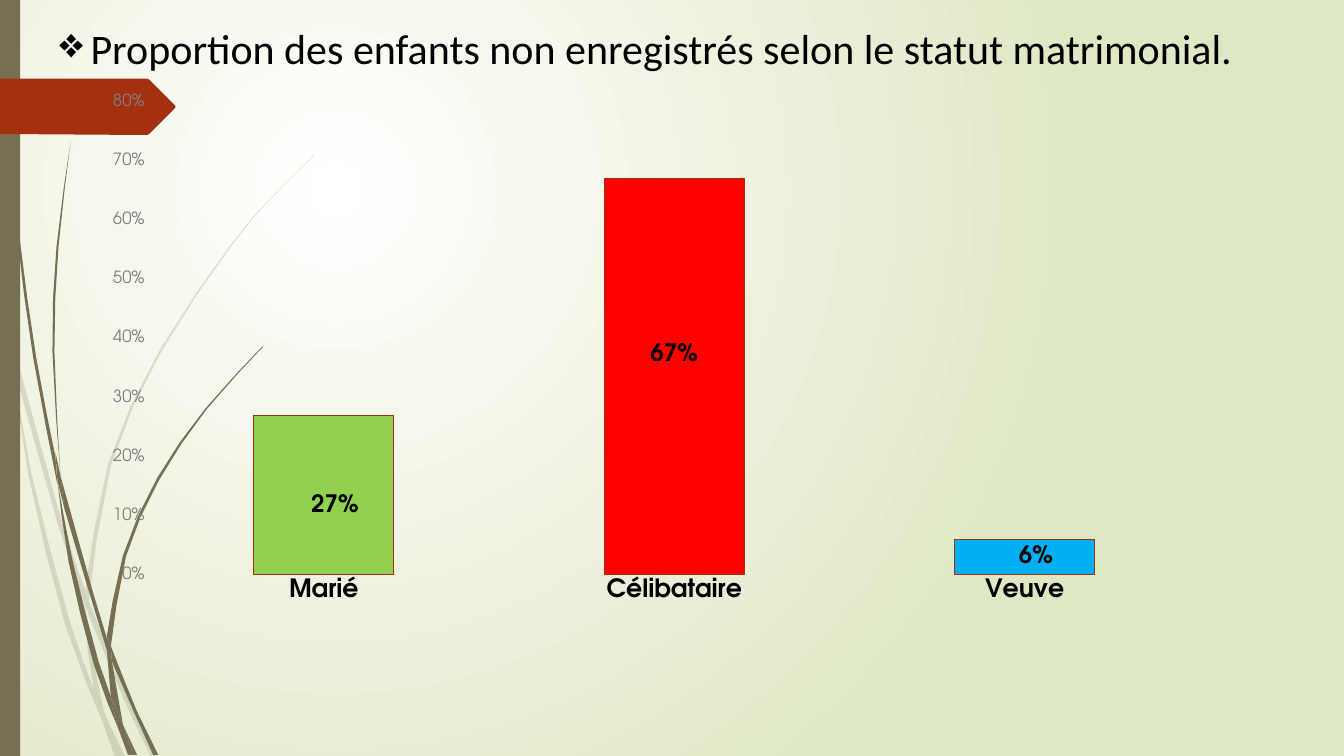
from math import dist

from lxml.etree import SubElement
from pptx import Presentation
from pptx.chart.data import CategoryChartData
from pptx.dml.color import RGBColor
from pptx.enum.chart import XL_CHART_TYPE, XL_LABEL_POSITION, XL_TICK_MARK
from pptx.enum.shapes import MSO_SHAPE
from pptx.enum.text import MSO_AUTO_SIZE
from pptx.oxml import parse_xml
from pptx.oxml.ns import nsdecls, qn
from pptx.util import Pt

PX = 9144  # one hundredth of an inch
WIDTH, HEIGHT = 1333, 750
LONG_SPAN = 60

BLACK = RGBColor(0x00, 0x00, 0x00)
GRAY = RGBColor(0x80, 0x80, 0x80)
WHITE = RGBColor(0xFF, 0xFF, 0xFF)
PALE_GREEN = RGBColor(0xDF, 0xE8, 0xC4)
OLIVE = RGBColor(0x76, 0x6F, 0x54)
RUST = RGBColor(0xA5, 0x30, 0x10)
BAR_EDGE = RGBColor(0xA1, 0x2F, 0x10)
GREEN = RGBColor(0x92, 0xD0, 0x50)
RED = RGBColor(0xFF, 0x00, 0x00)
BLUE = RGBColor(0x00, 0xB0, 0xF0)

CHART_FONT = "TeX Gyre Adventor"
TITLE_FONT = "Calibri"
TITLE = "Proportion des enfants non enregistrés selon le statut matrimonial."

# category, share, bar colour, label shift as fractions of the chart
BARS = [
    ("Marié", 0.27, GREEN, (0.01, 0.02)),
    ("Célibataire", 0.67, RED, (0, -0.04)),
    ("Veuve", 0.06, BLUE, (0.01, 0)),
]

# Each blade of grass is a pair of edges: one way along it, then back.
PALE_BLADES = [
    ([(11, 350), (0, 282)], [(0, 299), (11, 350)]),
    ([(17, 376), (58, 522), (84, 599)], [(85, 586), (62, 520), (14, 345)]),
    ([(88, 610), (123, 694), (150, 751)], [(155, 751), (127, 692), (88, 596)]),
    ([(105, 711), (119, 751)], [(124, 751), (105, 711)]),
    ([(101, 714), (93, 683), (70, 619), (31, 469), (11, 350)],
     [(11, 350), (28, 470), (65, 621), (101, 714)]),
    ([(84, 599), (87, 646), (93, 683), (105, 711)], [(103, 706), (91, 646), (84, 599)]),
    ([(312, 153), (268, 197), (228, 244), (158, 348), (107, 461), (85, 584)],
     [(88, 596), (110, 462), (160, 349), (229, 245), (268, 198), (312, 154)]),
    ([(101, 714), (114, 751)], [(119, 751), (101, 714)]),
    ([(85, 586), (84, 599)], [(88, 610), (88, 596)]),
    ([(93, 683), (101, 714), (119, 751)], [(119, 751), (105, 711), (93, 683)]),
]
DARK_BLADES = [
    ([(3, 0), (7, 110), (17, 233), (33, 355), (57, 481)],
     [(55, 453), (36, 355), (19, 232), (8, 109), (4, 0)]),
    ([(60, 472), (64, 505), (106, 645)], [(106, 633), (93, 590), (60, 472)]),
    ([(110, 641), (111, 656), (152, 749)], [(157, 749), (136, 706), (110, 641)]),
    ([(57, 477), (68, 557), (93, 659), (117, 722)],
     [(110, 691), (98, 657), (72, 556), (57, 477)]),
    ([(70, 141), (56, 245), (52, 349), (60, 472)],
     [(60, 472), (54, 349), (58, 245), (70, 141)]),
    ([(122, 719), (133, 749)], [(136, 749), (122, 719)]),
    ([(57, 477), (64, 505)], [(60, 472), (55, 449)]),
    ([(260, 344), (204, 405), (156, 474), (122, 551), (106, 631)],
     [(110, 641), (125, 552), (158, 476), (205, 406), (261, 344)]),
    ([(117, 722), (127, 749)], [(131, 749), (117, 722)]),
    ([(106, 645), (110, 691), (122, 719)], [(111, 656), (106, 645)]),
    ([(106, 645), (111, 656)], [(110, 641), (106, 631)]),
    ([(110, 691), (117, 722), (130, 749)], [(133, 749), (122, 719), (110, 691)]),
]
ARROW_TAB = [(0, 78), (146, 78), (148, 79), (174, 105), (174, 107), (148, 133), (146, 134), (0, 133)]


def paint_background(page):
    fill = page.background.fill
    fill.gradient()
    for stop, color, position in zip(fill.gradient_stops, (WHITE, PALE_GREEN), (0, 1)):
        stop.color.rgb = color
        stop.position = position
    gradient = page.background._cSld.find(".//" + qn("a:gradFill"))
    gradient.remove(gradient.find(qn("a:lin")))
    gradient.append(parse_xml(
        f'<a:path {nsdecls("a")} path="circle">'
        '<a:fillToRect l="50000" t="50000" r="100000" b="100000"/></a:path>'))


def smooth(edge):
    """Bend each long span of an edge by adding its Catmull-Rom midpoint."""
    knots = [edge[0], *edge, edge[-1]]
    curve = [edge[0]]
    for a, b, c, d in zip(knots, knots[1:], knots[2:], knots[3:]):
        if dist(b, c) > LONG_SPAN:
            curve.append(tuple((9 * (q + r) - p - s) / 16 for p, q, r, s in zip(a, b, c, d)))
        curve.append(c)
    return curve


def paint(shape, color, opacity=100):
    shape.shadow.inherit = False
    shape.fill.solid()
    shape.fill.fore_color.rgb = color
    shape.line.fill.background()
    if opacity < 100:
        tint = shape.fill._xPr.find(".//" + qn("a:srgbClr"))
        SubElement(tint, qn("a:alpha"), val=str(opacity * 1000))


def add_outline(page, points, color, opacity=100):
    start, *rest = [(round(x * PX), round(y * PX)) for x, y in points]
    builder = page.shapes.build_freeform(*start)
    builder.add_line_segments(rest, close=True)
    paint(builder.convert_to_shape(), color, opacity)


def add_blades(page, blades, opacity):
    for outward, back in blades:
        add_outline(page, smooth(outward) + smooth(back), OLIVE, opacity)


def set_font(font, size, color, bold=False, name=CHART_FONT):
    font.name = name
    font.size = Pt(size)
    font.bold = bold
    font.color.rgb = color


def manual_layout(x, y, width=None, height=None):
    """Layout of the inner plot when a size is given, else a label's shift."""
    tags = f'<c:x val="{x}"/><c:y val="{y}"/>'
    if width is not None:
        tags = ('<c:layoutTarget val="inner"/><c:xMode val="edge"/><c:yMode val="edge"/>'
                f'{tags}<c:w val="{width}"/><c:h val="{height}"/>')
    return parse_xml(f'<c:layout {nsdecls("c")}><c:manualLayout>{tags}</c:manualLayout></c:layout>')


def style_axis(axis, size, color, bold=False):
    axis.has_major_gridlines = False
    axis.major_tick_mark = axis.minor_tick_mark = XL_TICK_MARK.NONE
    axis.format.line.fill.background()
    set_font(axis.tick_labels.font, size, color, bold)


def style_bar(point, color, shift):
    point.format.fill.solid()
    point.format.fill.fore_color.rgb = color
    point.format.line.color.rgb = BAR_EDGE
    point.format.line.width = Pt(0.75)
    label = point.data_label
    set_font(label.font, 17.1, BLACK, bold=True)
    label.position = XL_LABEL_POSITION.CENTER
    label._get_or_add_dLbl().find(qn("c:idx")).addnext(manual_layout(*shift))


def add_status_chart(page):
    chart_data = CategoryChartData(number_format="0%")
    chart_data.categories = [bar[0] for bar in BARS]
    chart_data.add_series("Series 1", [bar[1] for bar in BARS])
    chart = page.shapes.add_chart(XL_CHART_TYPE.COLUMN_CLUSTERED, 112 * PX, 79 * PX,
                                  1123 * PX, 546 * PX, chart_data).chart
    chart.has_legend = chart.has_title = False
    set_font(chart.font, 10, BLACK)
    style_axis(chart.category_axis, 18, BLACK, bold=True)
    scale = chart.value_axis
    style_axis(scale, 12, GRAY)
    scale.minimum_scale, scale.maximum_scale, scale.major_unit = 0, 0.8, 0.1
    scale.tick_labels.number_format = "0%"
    scale.tick_labels.number_format_is_linked = False

    plot = chart.plots[0]
    plot.gap_width = 150
    plot.vary_by_categories = False
    for index, (_, _, color, shift) in enumerate(BARS):
        style_bar(plot.series[0].points[index], color, shift)
    area = chart._chartSpace.find(".//" + qn("c:plotArea"))
    for layout in area.findall(qn("c:layout")):
        area.remove(layout)
    area.insert(0, manual_layout(0.03, 0.04, 0.93, 0.86))


def add_title(page):
    box = page.shapes.add_textbox(49 * PX, 14 * PX, 1284 * PX, 64 * PX)
    box.text_frame.word_wrap = True
    box.text_frame.auto_size = MSO_AUTO_SIZE.SHAPE_TO_FIT_TEXT
    para = box.text_frame.paragraphs[0]
    para.line_spacing = 1.07
    para.space_after = Pt(8)
    properties = para._p.get_or_add_pPr()
    properties.set("marL", str(31 * PX))
    properties.set("indent", str(-31 * PX))
    SubElement(properties, qn("a:buChar"), char="❖")
    span = para.add_run()
    span.text = TITLE
    set_font(span.font, 30, BLACK, name=TITLE_FONT)


def main():
    deck = Presentation()
    deck.slide_width, deck.slide_height = WIDTH * PX, HEIGHT * PX
    page = deck.slides.add_slide(deck.slide_layouts[6])
    paint_background(page)
    add_blades(page, PALE_BLADES, 20)
    add_blades(page, DARK_BLADES, 100)
    paint(page.shapes.add_shape(MSO_SHAPE.RECTANGLE, 0, 0, 20 * PX, HEIGHT * PX), OLIVE)
    add_outline(page, ARROW_TAB, RUST)
    add_status_chart(page)
    add_title(page)
    deck.save("out.pptx")


if __name__ == "__main__":
    main()
